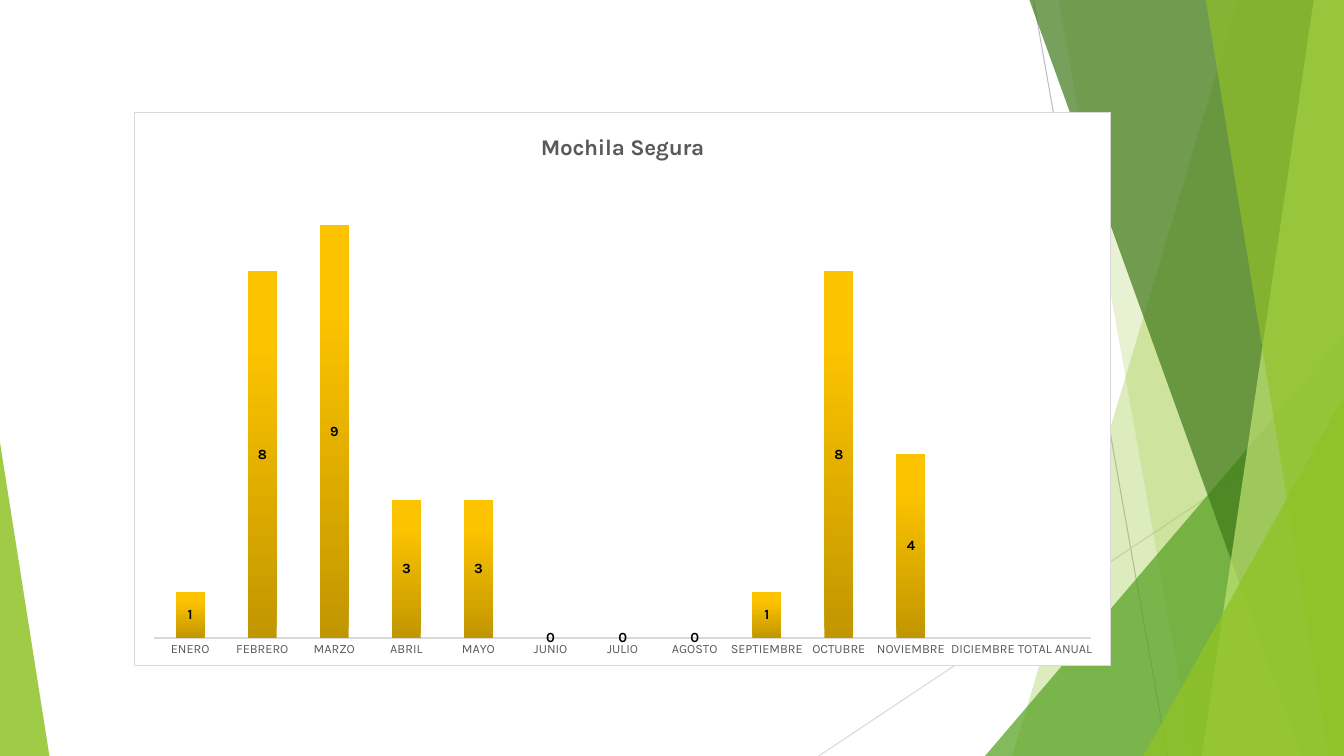
from copy import deepcopy

from pptx import Presentation
from pptx import util as u
from pptx.chart.data import CategoryChartData
from pptx.dml.color import RGBColor
from pptx.enum import chart as ch, shapes
from pptx.oxml import parse_xml
from pptx.oxml.ns import nsdecls, qn
from lxml import etree

W, H = 13.33, 7.5
FONT = "Karla"


def rgb(c):
    return RGBColor.from_string(c)


def paint(sp, color, alpha):
    """Fill a shape with a translucent colour, without line or shadow."""
    sp.shadow.inherit = False
    sp.line.fill.background()
    sp.fill.solid()
    sp.fill.fore_color.rgb = rgb(color)
    clr = sp._element.spPr.find(qn("a:solidFill"))[0]
    etree.SubElement(clr, qn("a:alpha")).set("val", str(alpha * 1000))


prs = Presentation()
prs.slide_width, prs.slide_height = u.Inches(W), u.Inches(H)
s = prs.slides.add_slide(prs.slide_layouts[6])

# Thin lines behind the facets
for x1, y1, x2, y2, color in [(10.25, 0, 11.58, H, "BFBFBF"),
                              (W, 4.03, 8.12, H, "D9D9D9")]:
    line = s.shapes.add_connector(shapes.MSO_CONNECTOR.STRAIGHT,
                                  *map(u.Inches, (x1, y1, x2, y2)))
    line.line.color.rgb = rgb(color)
    line.line.width = u.Pt(0.75)
    etree.SubElement(line._element.spPr, qn("a:effectLst"))

# Facets from back to front: bands (top x, bottom x) reach the right edge,
# triangles (left, top, width, apex) stand on the bottom edge
facets = [
    ("band", (12.28, 10.04), "90C226", 30),
    ("band", (10.5, 11.83), "90C226", 20),
    ("triangle", (9.77, 3.33, 3.56, 1), "54A021", 72),
    ("band", (10.21, 12.91), "3F7819", 70),
    ("band", (13.03, 11.92), "C0E474", 70),
    ("band", (11.96, 13.18), "90C226", 65),
    ("triangle", (11.34, 3.93, 1.99, 1), "90C226", 80),
    ("triangle", (0, 4.39, 0.49, 0), "90C226", 85),
]
for kind, place, color, alpha in facets:
    if kind == "band":
        top_x, bottom_x = place
        fb = s.shapes.build_freeform(u.Inches(top_x), 0)
        fb.add_line_segments([(u.Inches(x), u.Inches(y)) for x, y in
                              [(W, 0), (W, H), (bottom_x, H)]])
        sp = fb.convert_to_shape()
    else:
        left, top, width, apex = place
        sp = s.shapes.add_shape(shapes.MSO_SHAPE.ISOSCELES_TRIANGLE,
                                *map(u.Inches, (left, top, width, H - top)))
        sp.adjustments[0] = apex
    paint(sp, color, alpha)

# Chart
data = CategoryChartData()
data.categories = ["ENERO", "FEBRERO", "MARZO", "ABRIL", "MAYO", "JUNIO", "JULIO",
                   "AGOSTO", "SEPTIEMBRE", "OCTUBRE", "NOVIEMBRE", "DICIEMBRE",
                   "TOTAL ANUAL"]
data.add_series("Series 1", [1, 8, 9, 3, 3, 0, 0, 0, 1, 8, 4, None, None])
chart = s.shapes.add_chart(ch.XL_CHART_TYPE.COLUMN_STACKED,
                           *map(u.Inches, (1.33, 1.11, 9.69, 5.5)), data).chart
chart.has_legend = False
chart.font.size, chart.font.name = u.Pt(10), FONT
chart.font.color.rgb = rgb("000000")

chart.has_title = True
r = chart.chart_title.text_frame.paragraphs[0].add_run()
r.text = "Mochila Segura"
r.font.size, r.font.bold, r.font.name = u.Pt(16), True, FONT
r.font.color.rgb = rgb("595959")
chart.chart_title.include_in_layout = False

months = chart.category_axis
months.major_tick_mark = ch.XL_TICK_MARK.NONE
months.tick_labels.font.size = u.Pt(9)
months.tick_labels.font.name = FONT
months.tick_labels.font.color.rgb = rgb("595959")
months.format.line.color.rgb = rgb("D9D9D9")
months.format.line.width = u.Pt(1)

counts = chart.value_axis
counts.visible = False
counts.has_major_gridlines = False
counts.minimum_scale, counts.maximum_scale = 0, 10

plot = chart.plots[0]
plot.gap_width, plot.overlap = 150, 100
plot.vary_by_categories = False
ser = plot.series[0]
fill = ser.format.fill
fill.gradient()
fill.gradient_angle = 90
stops = next(ser._element.iter(qn("a:gsLst")))
stops.append(deepcopy(stops[1]))
for stop, (position, color) in zip(fill.gradient_stops,
                                   [(0, "C29600"), (0.8, "FCC300"), (1, "FDC400")]):
    stop.position = position
    stop.color.rgb = rgb(color)

labels = ser.data_labels
labels.show_value = True
labels.position = ch.XL_LABEL_POSITION.CENTER
labels.font.size, labels.font.bold, labels.font.name = u.Pt(10), True, FONT
labels.font.color.rgb = rgb("000000")

# Plot area as shares of the chart, then the chart's own frame
area = chart._chartSpace.chart.plotArea
for old in area.findall(qn("c:layout")):
    area.remove(old)
shares = "".join(f'<c:{k} val="{v}"/>' for k, v in
                 [("x", 0.02), ("y", 0.12), ("w", 0.96), ("h", 0.83)])
area.insert(0, parse_xml(
    f'<c:layout {nsdecls("c")}><c:manualLayout><c:layoutTarget val="inner"/>'
    f'<c:xMode val="edge"/><c:yMode val="edge"/>{shares}'
    '</c:manualLayout></c:layout>'))
chart._chartSpace.chart.addnext(parse_xml(
    f'<c:spPr {nsdecls("c", "a")}>'
    '<a:solidFill><a:srgbClr val="FFFFFF"/></a:solidFill>'
    f'<a:ln w="{u.Pt(0.75)}"><a:solidFill><a:srgbClr val="D9D9D9"/></a:solidFill></a:ln>'
    '</c:spPr>'))

prs.save("out.pptx")
